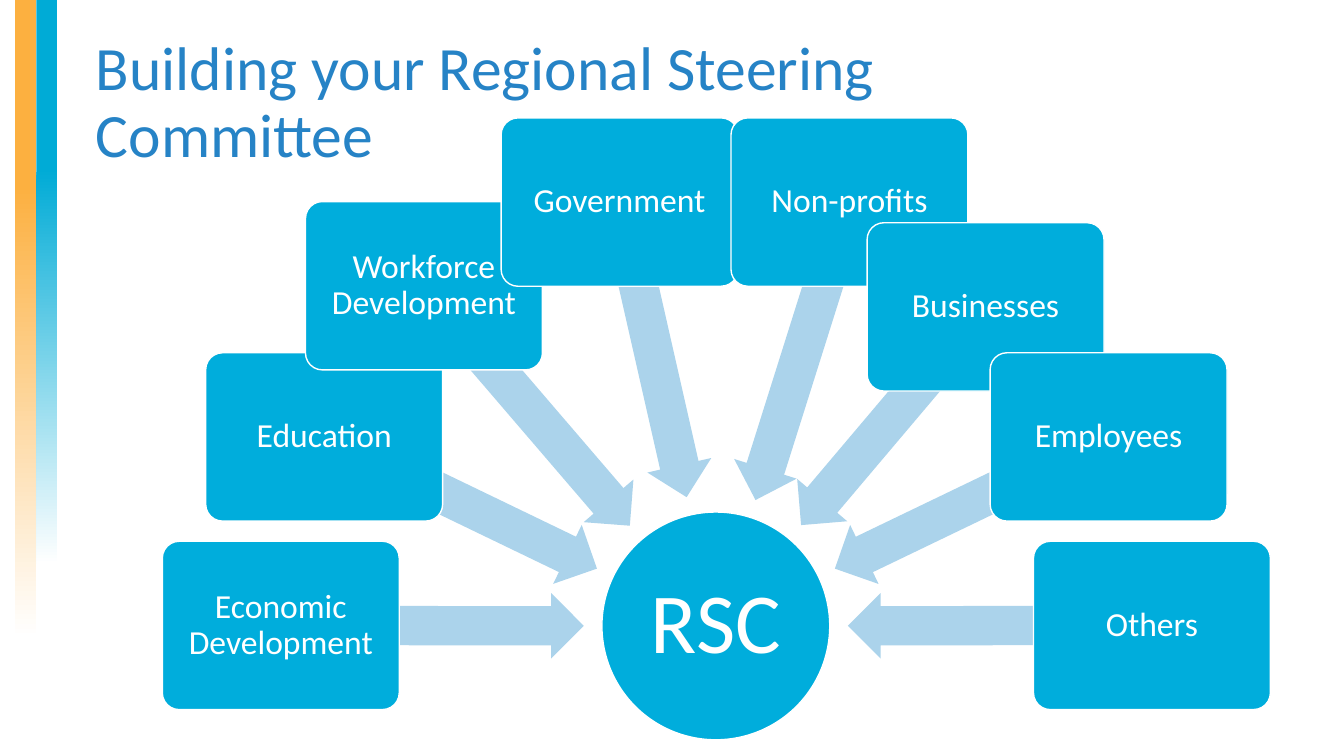
"""Build the Regional Steering Committee slide: eight groups pointing at a hub."""
from math import atan2, degrees, hypot

from pptx import Presentation
from pptx.dml.color import RGBColor
from pptx.enum.shapes import MSO_SHAPE
from pptx.enum.text import MSO_ANCHOR, MSO_AUTO_SIZE, PP_ALIGN
from pptx.util import Emu, Pt

EMU_PER_PX = 9144
FONT = "Calibri"
WHITE, CYAN, PALE_BLUE, TITLE_BLUE = "FFFFFF", "00ADDC", "ABD3EB", "2683C6"
HUB_X, HUB_Y, HUB_SIZE = 710, 621, 226
BOX_WIDTH, BOX_HEIGHT = 235, 167
ARROW_WIDTH, TIP_TO_HUB_CENTER = 65, 131
GROUPS = [
    ("Economic Development", 161, 537),
    ("Education", 204, 350),
    ("Workforce Development", 303, 200),
    ("Government", 497, 117),
    ("Non-profits", 725, 117),
    ("Businesses", 860, 221),
    ("Employees", 982, 350),
    ("Others", 1025, 537),
]


def px(length):
    """Turn px (100 to the inch) into EMU."""
    return Emu(round(length * EMU_PER_PX))


def color(hex_string):
    """Turn a hex string into a colour."""
    return RGBColor.from_string(hex_string)


def format_text(frame, size, hex_string, align, inset):
    """Format the single paragraph of a text frame."""
    frame.word_wrap = True
    frame.auto_size = MSO_AUTO_SIZE.NONE
    frame.vertical_anchor = MSO_ANCHOR.MIDDLE
    frame.margin_left = frame.margin_right = px(inset)
    frame.margin_top = frame.margin_bottom = px(5)
    para = frame.paragraphs[0]
    para.alignment = align
    para.line_spacing = 0.9
    for span in para.runs:
        span.font.name = FONT
        span.font.size = Pt(size)
        span.font.color.rgb = color(hex_string)


def add_shape(slide, kind, left, top, width, height):
    """Add a preset shape without shadow or line."""
    shape = slide.shapes.add_shape(kind, px(left), px(top), px(width), px(height))
    shape.shadow.inherit = False
    shape.line.fill.background()
    return shape


def add_stripe(slide, left, height, hex_string, fade_start):
    """Add a vertical stripe that fades to white."""
    stripe = add_shape(slide, MSO_SHAPE.RECTANGLE, left, 0, 21, height)
    stripe.fill.gradient()
    stripe.fill.gradient_angle = 270
    stops = [(fade_start, hex_string), (1, WHITE)]
    for stop, (position, stop_color) in zip(stripe.fill.gradient_stops, stops):
        stop.position = position
        stop.color.rgb = color(stop_color)


def add_label_shape(slide, kind, place, text, size):
    """Add a cyan shape with a white outline and centred text."""
    shape = add_shape(slide, kind, *place)
    shape.fill.solid()
    shape.fill.fore_color.rgb = color(CYAN)
    shape.line.color.rgb = color(WHITE)
    shape.line.width = Pt(1)
    shape.text_frame.text = text
    format_text(shape.text_frame, size, WHITE, PP_ALIGN.CENTER, 5)
    return shape


def add_arrow_to_hub(slide, start_x, start_y):
    """Add a block arrow from a group's centre towards the hub."""
    run, rise = HUB_X - start_x, HUB_Y - start_y
    distance = hypot(run, rise)
    length = distance - TIP_TO_HUB_CENTER
    middle_x = start_x + run / distance * length / 2
    middle_y = start_y + rise / distance * length / 2
    arrow = add_shape(slide, MSO_SHAPE.LEFT_ARROW, middle_x - length / 2,
                      middle_y - ARROW_WIDTH / 2, length, ARROW_WIDTH)
    arrow.adjustments[0] = 0.6
    arrow.adjustments[1] = 0.5
    arrow.rotation = degrees(atan2(rise, run)) + 180
    arrow.fill.solid()
    arrow.fill.fore_color.rgb = color(PALE_BLUE)


def add_group(slide, name, left, top):
    """Add a group's arrow and its rounded box."""
    add_arrow_to_hub(slide, left + BOX_WIDTH / 2, top + BOX_HEIGHT / 2)
    box = add_label_shape(slide, MSO_SHAPE.ROUNDED_RECTANGLE,
                          (left, top, BOX_WIDTH, BOX_HEIGHT), name, 24)
    box.adjustments[0] = 0.1


def set_title(slide, text):
    """Place and format the title."""
    title = slide.shapes.title
    title.left, title.top, title.width, title.height = map(px, (85, 26, 943, 154))
    title.text_frame.text = text
    format_text(title.text_frame, 44, TITLE_BLUE, PP_ALIGN.LEFT, 10)


def main():
    """Build and save the deck."""
    deck = Presentation()
    deck.slide_width, deck.slide_height = px(1333), px(750)
    slide = deck.slides.add_slide(deck.slide_layouts[5])
    add_stripe(slide, 15, 633, "FCB040", 0.29)
    add_stripe(slide, 36, 560, "00ABD6", 0.3)
    set_title(slide, "Building your Regional Steering Committee")
    hub_place = (HUB_X - HUB_SIZE / 2, HUB_Y - HUB_SIZE / 2, HUB_SIZE, HUB_SIZE)
    add_label_shape(slide, MSO_SHAPE.OVAL, hub_place, "RSC", 61)
    for name, left, top in GROUPS:
        add_group(slide, name, left, top)
    deck.save("out.pptx")


if __name__ == "__main__":
    main()
